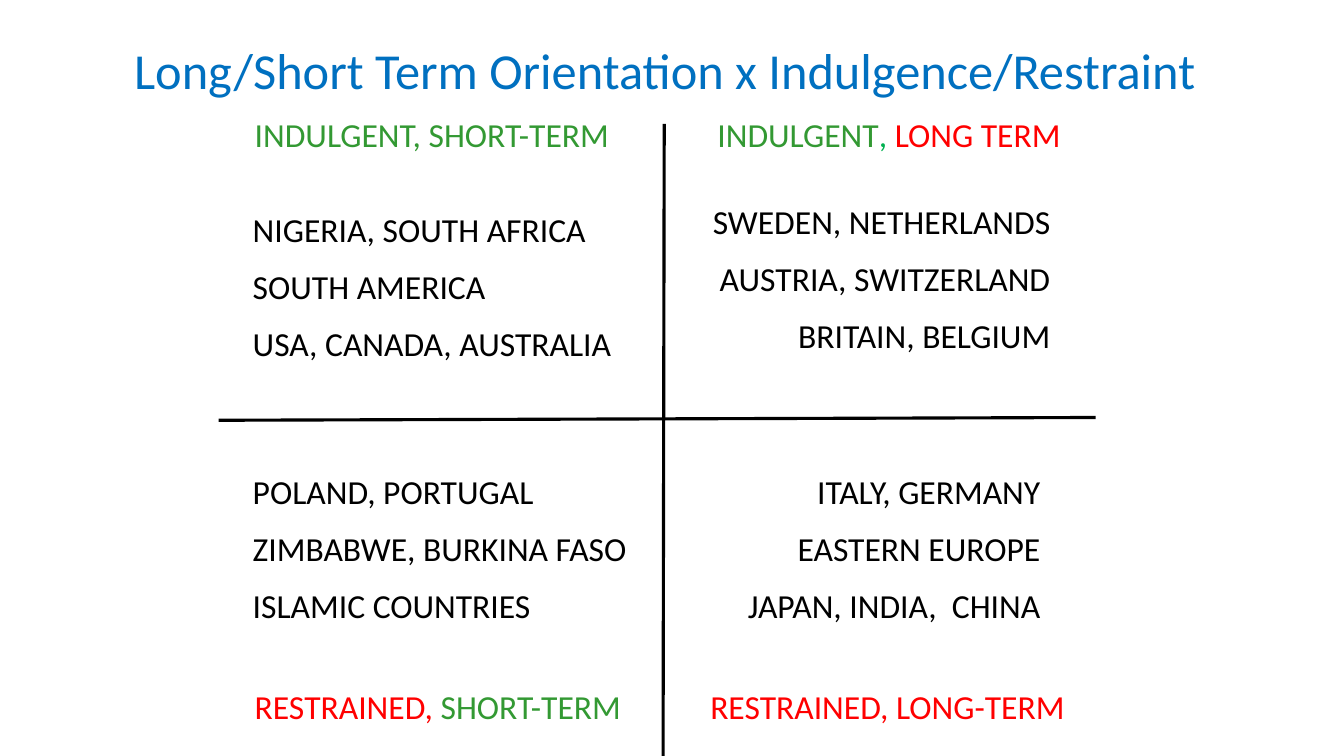
from lxml.etree import SubElement
from pptx import Presentation
from pptx.dml.color import RGBColor
from pptx.enum.shapes import MSO_CONNECTOR as Connector
from pptx.enum.text import MSO_ANCHOR as Anchor, PP_ALIGN as Align
from pptx.oxml.ns import qn
from pptx.util import Cm, Pt

# Content
FONT = "Calibri"
BLACK, BLUE, GREEN, RED = "000000", "0070C0", "339933", "FF0000"
TITLE = "Long/Short Term Orientation x Indulgence/Restraint"

# Quadrant headings: left, top, coloured runs (cm)
HEADINGS = [
    (6.17, 2.74, [("INDULGENT, SHORT-TERM", GREEN)]),
    (17.83, 2.74, [("INDULGENT", GREEN), (", ", "00B050"), ("LONG TERM", RED)]),
    (6.17, 17.15, [("RESTRAINED, ", RED), ("SHORT-TERM", GREEN)]),
    (17.65, 17.15, [("RESTRAINED, LONG-TERM", RED)]),
]
HEADING_WIDTH = 10.5

# Quadrant countries: left, top, right edge, alignment, lines (cm)
COUNTRIES = [
    (6.12, 5.13, 16.5, Align.LEFT,
     ["NIGERIA, SOUTH AFRICA", "SOUTH AMERICA", "USA, CANADA, AUSTRALIA"]),
    (17, 4.93, 26.72, Align.RIGHT,
     ["SWEDEN, NETHERLANDS", "AUSTRIA, SWITZERLAND", "BRITAIN, BELGIUM"]),
    (6.12, 11.73, 16.5, Align.LEFT,
     ["POLAND, PORTUGAL", "ZIMBABWE, BURKINA FASO", "ISLAMIC COUNTRIES"]),
    (17, 11.73, 26.47, Align.RIGHT,
     ["ITALY, GERMANY", "EASTERN EUROPE", "JAPAN, INDIA,  CHINA"]),
]

# Axes: start x, start y, end x, end y (cm)
AXES = [(16.74, 3.12, 16.71, 19.05), (5.51, 10.59, 27.61, 10.52)]


def color(hex_string):
    return RGBColor.from_string(hex_string)


def add_run(paragraph, text, hex_string, size=24):
    run = paragraph.add_run()
    run.text = text
    run.font.name = FONT
    run.font.size = Pt(size)
    run.font.color.rgb = color(hex_string)


def add_text(slide, left, top, width, lines, align=Align.LEFT):
    """Add one text box; each line is a list of (text, colour) runs."""
    height = 0.26 + 1.03 * len(lines) + 0.42 * (len(lines) - 1)
    box = slide.shapes.add_textbox(Cm(left), Cm(top), Cm(width), Cm(height))
    frame = box.text_frame
    frame.word_wrap = True
    for index, runs in enumerate(lines):
        paragraph = frame.add_paragraph() if index else frame.paragraphs[0]
        paragraph.alignment = align
        paragraph.space_before = Pt(12 if index else 0)
        for text, hex_string in runs:
            add_run(paragraph, text, hex_string)


def add_axis(slide, ends):
    axis = slide.shapes.add_connector(Connector.STRAIGHT, *map(Cm, ends))
    axis.line.color.rgb = color(BLACK)
    axis.line.width = Pt(2.25)
    SubElement(axis._element.spPr, qn("a:effectLst"))


def main():
    presentation = Presentation()
    presentation.slide_width, presentation.slide_height = Cm(33.87), Cm(19.05)
    slide = presentation.slides.add_slide(presentation.slide_layouts[5])

    # Title
    title = slide.shapes.title
    title.left, title.top, title.width, title.height = map(Cm, (1.47, 0.84, 30.58, 1.8))
    title.text_frame.vertical_anchor = Anchor.MIDDLE
    paragraph = title.text_frame.paragraphs[0]
    paragraph.alignment = Align.CENTER
    add_run(paragraph, TITLE, BLUE, 36)

    # Axes and quadrants
    for ends in AXES:
        add_axis(slide, ends)
    for left, top, runs in HEADINGS:
        add_text(slide, left, top, HEADING_WIDTH, [runs])
    for left, top, right, align, lines in COUNTRIES:
        add_text(slide, left, top, right - left, [[(line, BLACK)] for line in lines], align)

    presentation.save("out.pptx")


if __name__ == "__main__":
    main()
